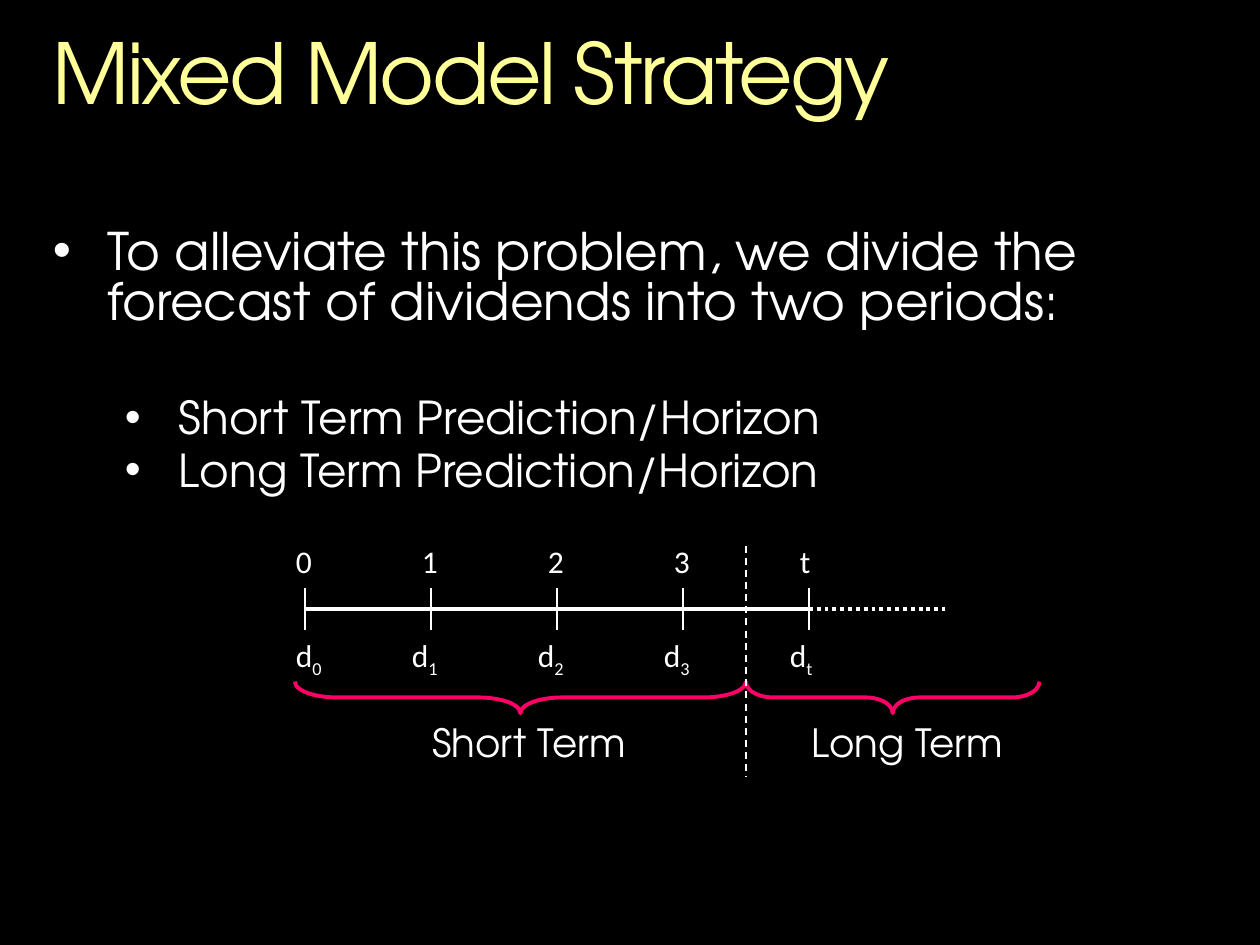
from dataclasses import dataclass

from lxml import etree
from pptx import Presentation
from pptx import util as u
from pptx.dml.color import RGBColor
from pptx.enum import dml, shapes, text
from pptx.oxml.ns import qn


@dataclass(frozen=True)
class Theme:
    background: RGBColor = RGBColor.from_string("000000")
    title: RGBColor = RGBColor.from_string("FFFF99")
    ink: RGBColor = RGBColor.from_string("FFFFFF")
    brace: RGBColor = RGBColor.from_string("FF0066")
    display_font: str = "TeX Gyre Adventor"
    label_font: str = "Calibri"
    title_size: float = 48
    body_size: float = 29.6
    sub_size: float = 25.9
    term_size: float = 22.2
    label_size: float = 18
    thin: float = 1
    thick: float = 2.25


THEME = Theme()


def place(item, left, top, width, height):
    item.left, item.top = u.Inches(left), u.Inches(top)
    item.width, item.height = u.Inches(width), u.Inches(height)


def set_frame(frame, margin=0.0):
    """Top-anchored, wrapping frame; gives back its first paragraph."""
    frame.word_wrap = True
    frame.auto_size = text.MSO_AUTO_SIZE.NONE
    frame.vertical_anchor = text.MSO_ANCHOR.TOP
    frame.margin_left = frame.margin_right = u.Inches(margin)
    frame.margin_top = frame.margin_bottom = u.Inches(margin / 2)
    return frame.paragraphs[0]


def add_span(para, words, size, font=THEME.display_font, color=THEME.ink):
    span = para.add_run()
    span.text = words
    span.font.size = u.Pt(size)
    span.font.name = font
    span.font.color.rgb = color
    return span


def add_label(page, box, words, size, font, align, margin=0.0, subscript=""):
    left, top, width, height = map(u.Inches, box)
    label = page.shapes.add_textbox(left, top, width, height)
    para = set_frame(label.text_frame, margin)
    para.alignment = align
    add_span(para, words, size, font)
    if subscript:
        span = add_span(para, subscript, size, font)
        span.font._element.set("baseline", "-25000")


def add_line(page, x1, y1, x2, y2, weight, dash=None):
    line = page.shapes.add_connector(
        shapes.MSO_CONNECTOR.STRAIGHT, *map(u.Inches, (x1, y1, x2, y2)))
    line.line.color.rgb = THEME.ink
    line.line.width = u.Pt(weight)
    if dash:
        line.line.dash_style = dash
    etree.SubElement(line._element.spPr, qn("a:effectLst"))


def add_brace(page, left, right, top, depth, curl):
    """Brace opening upwards: a left brace turned about its centre."""
    span = right - left
    brace = page.shapes.add_shape(
        shapes.MSO_SHAPE.LEFT_BRACE,
        u.Inches((left + right - depth) / 2), u.Inches(top + (depth - span) / 2),
        u.Inches(depth), u.Inches(span))
    brace.rotation = 270
    brace.adjustments[0] = curl
    brace.shadow.inherit = False
    brace.fill.background()
    brace.line.color.rgb = THEME.brace
    brace.line.width = u.Pt(THEME.thick)


def fill_title(page, box):
    title = page.shapes.title
    place(title, *box)
    para = set_frame(title.text_frame)
    para.alignment = text.PP_ALIGN.LEFT
    para.line_spacing = 0.9
    span = add_span(para, "Mixed Model Strategy", THEME.title_size, color=THEME.title)
    span.font._element.set("spc", "-150")


def fill_body(page, box):
    body = page.placeholders[1]
    place(body, *box)
    first = set_frame(body.text_frame)
    # words, level, left indent, size, space before
    items = [
        ("To alleviate this problem, we divide the forecast of dividends "
         "into two periods:", 0, 0.43, THEME.body_size, 0),
        ("Short Term Prediction/Horizon", 1, 1, THEME.sub_size, 40),
        ("Long Term Prediction/Horizon", 1, 1, THEME.sub_size, 5.2),
    ]
    for index, (words, level, indent, size, before) in enumerate(items):
        para = body.text_frame.add_paragraph() if index else first
        para.level = level
        props = para._p.get_or_add_pPr()
        props.set("marL", str(u.Inches(indent)))
        props.set("indent", str(u.Inches(-0.43)))
        etree.SubElement(props, qn("a:buChar")).set("char", "•")
        para.alignment = text.PP_ALIGN.LEFT
        para.line_spacing = 0.8
        para.space_before = u.Pt(before)
        add_span(para, words, size)


def draw_timeline(page, box):
    left, top, width, height = box
    axis = top + 0.5
    step = 1
    end = left + 4 * step
    split = end - step / 2
    right = left + width

    # Axis, solid up to t and dotted beyond
    add_line(page, left, axis, end, axis, THEME.thick)
    add_line(page, end, axis, end + 1.08, axis, THEME.thick,
             dml.MSO_LINE.ROUND_DOT)

    # Ticks with period above and dividend below
    for index, period in enumerate("0123t"):
        x = left + index * step
        add_line(page, x, axis - 0.16, x, axis + 0.17, THEME.thin)
        add_label(page, (x - 0.17, top - 0.08, 0.33, 0.4), period,
                  THEME.label_size, THEME.label_font, text.PP_ALIGN.LEFT, 0.1)
        shift = 0.25 if index else 0.17
        add_label(page, (x - shift, top + 0.67, 0.58, 0.4), "d",
                  THEME.label_size, THEME.label_font, text.PP_ALIGN.LEFT, 0.1,
                  subscript=period)

    # Braces, their names and the divider
    terms = [("Short Term", left - 0.08, split, 1.33, 4.2),
             ("Long Term", split, right, 0.86, 7.2)]
    for name, start, stop, curl, centre in terms:
        add_brace(page, start, stop, top + 1.08, 0.25, curl)
        add_label(page, (centre - 1, top + 1.37, 2, 0.45), name,
                  THEME.term_size, THEME.display_font, text.PP_ALIGN.CENTER)
    add_line(page, split, top, split, top + height, THEME.thin,
             dml.MSO_LINE.DASH)


def main():
    deck = Presentation()
    deck.slide_width, deck.slide_height = u.Inches(10), u.Inches(7.5)
    page = deck.slides.add_slide(deck.slide_layouts[1])
    page.background.fill.solid()
    page.background.fill.fore_color.rgb = THEME.background
    fill_title(page, (0.42, 0.25, 9.17, 0.73))
    fill_body(page, (0.42, 1.83, 9.17, 4.75))
    draw_timeline(page, (2.42, 4.33, 5.83, 1.84))
    deck.save("out.pptx")


if __name__ == "__main__":
    main()
